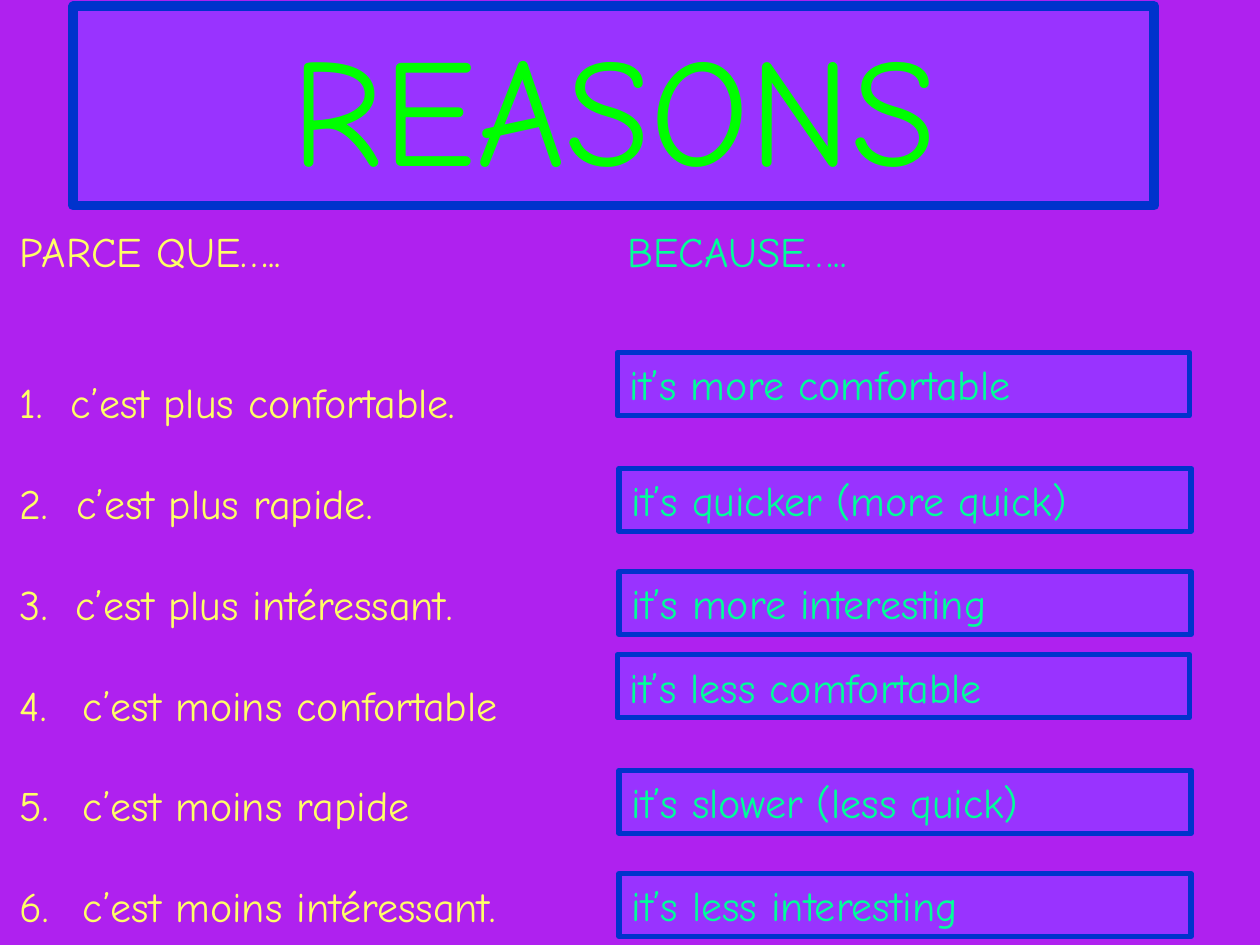
import pptx
import pptx.util
import pptx.dml.color
import pptx.enum.shapes
import pptx.enum.text
import pptx.oxml.ns
import lxml.etree
from dataclasses import dataclass

Pt = pptx.util.Pt
Align = pptx.enum.text.PP_ALIGN
FONT = "Comic Neue"
HUES = {"back": "AF21EF", "box": "9933FF", "edge": "0033CC",
        "title": "00FF00", "french": "FFFF66", "english": "00FF99"}


@dataclass
class Box:
    text: str
    left: float
    top: float
    width: float = 326.9
    height: float = 36
    line: float = 3
    size: float = 24
    hue: str = "english"
    align: Align = Align.LEFT


def tone(name: str) -> pptx.dml.color.RGBColor:
    return pptx.dml.color.RGBColor.from_string(HUES[name])


def style(para, size: float, hue: str) -> None:
    for key, value in {"name": FONT, "size": Pt(size)}.items():
        setattr(para.font, key, value)
    para.font.color.rgb = tone(hue)


def set_frame(frame) -> None:
    form = {"word_wrap": True,
            "vertical_anchor": pptx.enum.text.MSO_ANCHOR.TOP}
    for key, value in form.items():
        setattr(frame, key, value)


def add_box(slide, box: Box) -> None:
    shape = slide.shapes.add_shape(
        pptx.enum.shapes.MSO_SHAPE.RECTANGLE,
        Pt(box.left), Pt(box.top), Pt(box.width), Pt(box.height))
    shape.shadow.inherit = False
    shape.fill.solid()
    shape.fill.fore_color.rgb = tone("box")
    shape.line.color.rgb = tone("edge")
    shape.line.width = Pt(box.line)
    set_frame(shape.text_frame)
    para = shape.text_frame.paragraphs[0]
    para.text = box.text
    para.alignment = box.align
    style(para, box.size, box.hue)


def add_list(slide, left: float, height: float, head: str, hue: str):
    frame = slide.shapes.add_textbox(
        Pt(left), Pt(125.3), Pt(340), Pt(height)).text_frame
    set_frame(frame)
    frame.paragraphs[0].text = head
    style(frame.paragraphs[0], 24, hue)
    return frame


def add_item(frame, text: str, gap: float, hue: str, start: int = 0) -> None:
    para = frame.add_paragraph()
    para.text = text
    para.space_before = Pt(gap)
    style(para, 24, hue)
    if start:
        props = para._p.get_or_add_pPr()
        props.set("marL", str(Pt(36)))
        props.set("indent", str(-Pt(36)))
        mark = lxml.etree.SubElement(props, pptx.oxml.ns.qn("a:buAutoNum"))
        mark.set("type", "arabicPeriod")
        mark.set("startAt", str(start))


def main() -> None:
    deck = pptx.Presentation()
    deck.slide_width, deck.slide_height = Pt(720), Pt(540)
    slide = deck.slides.add_slide(deck.slide_layouts[6])
    slide.background.fill.solid()
    slide.background.fill.fore_color.rgb = tone("back")

    # Column heads and French reasons
    add_list(slide, 351.4, 94.3, "BECAUSE…..", "english")
    french = add_list(slide, 4.3, 411, "PARCE QUE…..", "french")
    row = 28.8
    typed = ["1.  c’est plus confortable.", "2.  c’est plus rapide.",
             "3.  c’est plus intéressant."]
    for i, text in enumerate(typed):
        add_item(french, text, row if i else 2 * row, "french")
    for text in ["c’est moins confortable", "c’est moins rapide",
                 "c’est moins intéressant."]:
        add_item(french, text, row, "french", start=4)

    # Title
    add_box(slide, Box("REASONS", 41.8, 3.6, 617.8, 113.8, 5.5, 88,
                       "title", Align.CENTER))

    # English answers, in two groups of three
    groups = [
        (201.6, ["it’s more comfortable", "it’s quicker (more quick)",
                 "it’s more interesting"]),
        (374.2, ["it’s less comfortable", "it’s slower (less quick)",
                 "it’s less interesting"]),
    ]
    shifts = [(352.8, 0), (353.8, 66), (353.8, 125)]
    for top, texts in groups:
        for text, (left, drop) in zip(texts, shifts):
            add_box(slide, Box(text, left, top + drop))

    deck.save("out.pptx")


if __name__ == "__main__":
    main()
